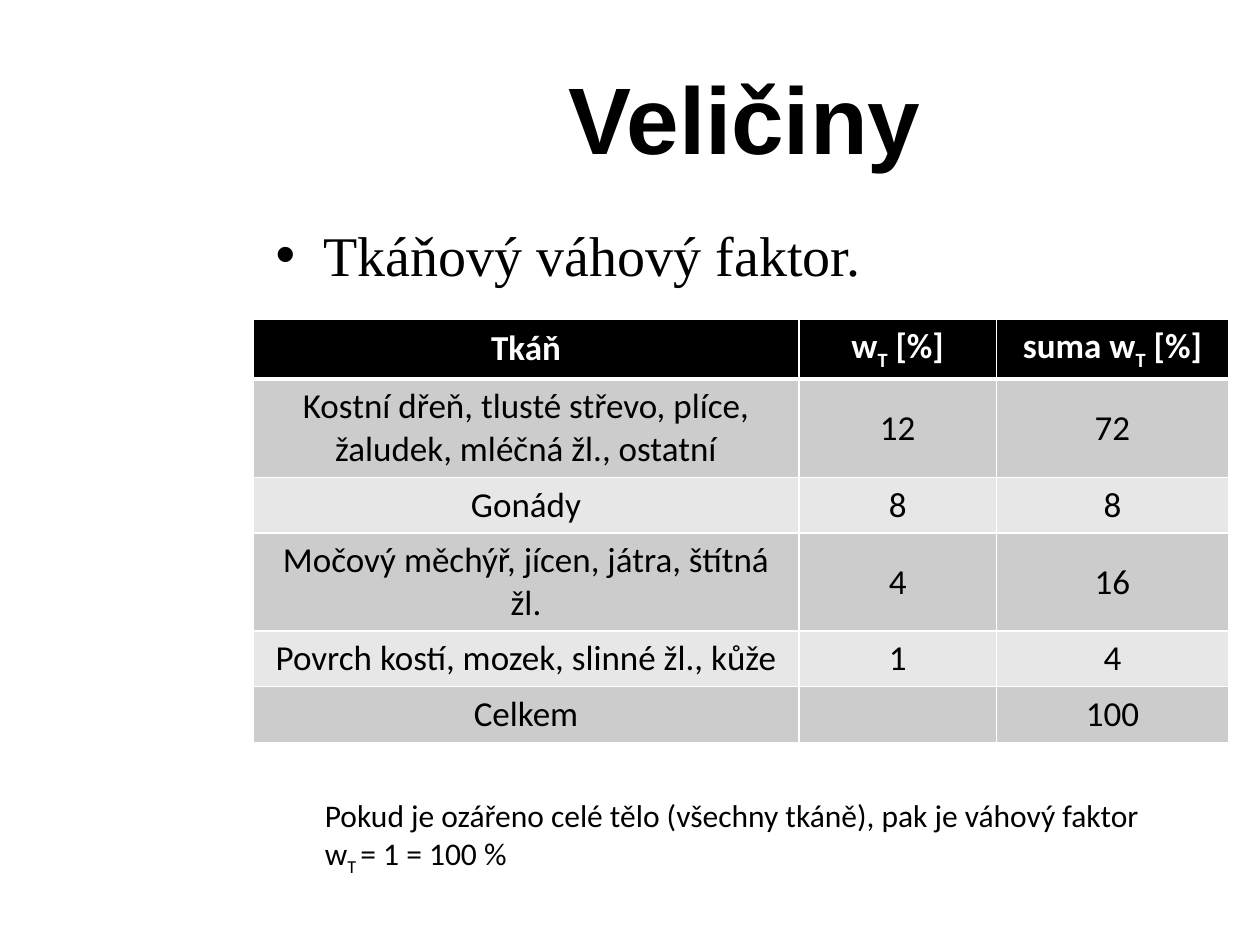
from lxml.etree import SubElement
from pptx import Presentation
from pptx.dml.color import RGBColor
from pptx.enum.text import MSO_ANCHOR as Anchor, MSO_AUTO_SIZE as AutoSize, PP_ALIGN as Align
from pptx.oxml.ns import qn
from pptx.util import Inches, Pt

BLACK, WHITE = "000000", "FFFFFF"
BANDS = ("CCCCCC", "E7E7E7")
COLUMN_WIDTHS = (4.33, 1.57, 1.84)
ROW_HEIGHT = 0.41
TISSUES = (
    ("Tkáň", "w|T| [%]", "suma w|T| [%]"),
    ("Kostní dřeň, tlusté střevo, plíce, žaludek, mléčná žl., ostatní", "12", "72"),
    ("Gonády", "8", "8"),
    ("Močový měchýř, jícen, játra, štítná žl.", "4", "16"),
    ("Povrch kostí, mozek, slinné žl., kůže", "1", "4"),
    ("Celkem", "", "100"),
)


def rgb(value):
    """Turn a hex string into a colour."""
    return RGBColor.from_string(value)


def write_text(frame, text, size, font="Calibri", color=BLACK, bold=False,
               align=Align.LEFT, bullet=None):
    """Write one paragraph, with the parts between bars as subscripts."""
    paragraph = frame.paragraphs[0]
    if bullet:
        properties = paragraph._p.get_or_add_pPr()
        properties.set("marL", str(Inches(0.38)))
        properties.set("indent", str(-Inches(0.38)))
        SubElement(properties, qn("a:buFont"), typeface="Arial")
        SubElement(properties, qn("a:buChar"), char=bullet)
    paragraph.alignment = align
    paragraph.font.size = Pt(size)
    for position, part in enumerate(text.split("|")):
        if not part:
            continue
        run = paragraph.add_run()
        run.text = part
        run.font.size = Pt(size)
        run.font.name = font
        run.font.bold = bold
        run.font.color.rgb = rgb(color)
        if position % 2:
            run.font._element.set("baseline", "-25000")


def add_text(slide, text, left, top, width, height, anchor=Anchor.TOP,
             fit=AutoSize.NONE, **text_format):
    """Add a wrapping text box."""
    frame = slide.shapes.add_textbox(
        Inches(left), Inches(top), Inches(width), Inches(height)).text_frame
    frame.word_wrap = True
    frame.auto_size = fit
    frame.vertical_anchor = anchor
    write_text(frame, text, **text_format)


def set_borders(cell, color, widths):
    """Draw the cell's borders, given as points by side."""
    properties = cell._tc.get_or_add_tcPr()
    for side, width in widths.items():
        line = SubElement(properties, qn(f"a:ln{side}"), w=str(Pt(width)))
        fill = SubElement(line, qn("a:solidFill"))
        SubElement(fill, qn("a:srgbClr"), val=color)


def add_tissue_table(slide, left, top):
    """Add the table of tissue weighting factors."""
    table = slide.shapes.add_table(
        len(TISSUES), len(COLUMN_WIDTHS), Inches(left), Inches(top),
        Inches(sum(COLUMN_WIDTHS)), Inches(ROW_HEIGHT * len(TISSUES))).table
    for column, width in zip(table.columns, COLUMN_WIDTHS):
        column.width = Inches(width)
    for row_index, tissue in enumerate(TISSUES):
        header = row_index == 0
        table.rows[row_index].height = Inches(ROW_HEIGHT)
        for column_index, text in enumerate(tissue):
            cell = table.cell(row_index, column_index)
            cell.vertical_anchor = Anchor.MIDDLE
            set_borders(cell, WHITE, {"L": 1, "R": 1, "T": 3 if row_index == 1 else 1,
                                      "B": 3 if header else 1})
            cell.fill.solid()
            cell.fill.fore_color.rgb = rgb(BLACK if header else BANDS[(row_index - 1) % 2])
            write_text(cell.text_frame, text, 20, bold=header, align=Align.CENTER,
                       color=WHITE if header else BLACK)


def main():
    """Build the slide and save it."""
    deck = Presentation()
    deck.slide_width, deck.slide_height = Inches(10), Inches(7.5)
    slide = deck.slides.add_slide(deck.slide_layouts[6])
    add_text(slide, "Veličiny", 2.08, 0.3, 7.66, 1.25, anchor=Anchor.MIDDLE,
             size=54, font="Arial", bold=True, align=Align.CENTER)
    add_text(slide, "Tkáňový váhový faktor.", 2.09, 1.7, 7.67, 5.43,
             size=32, font="Times New Roman", bullet="•")
    add_tissue_table(slide, 2.01, 2.53)
    add_text(slide, "Pokud je ozářeno celé tělo (všechny tkáně), pak je váhový faktor "
             "w|T |= 1 = 100 %", 2.48, 6.27, 6.85, 0.71,
             fit=AutoSize.SHAPE_TO_FIT_TEXT, size=18)
    deck.save("out.pptx")


if __name__ == "__main__":
    main()
